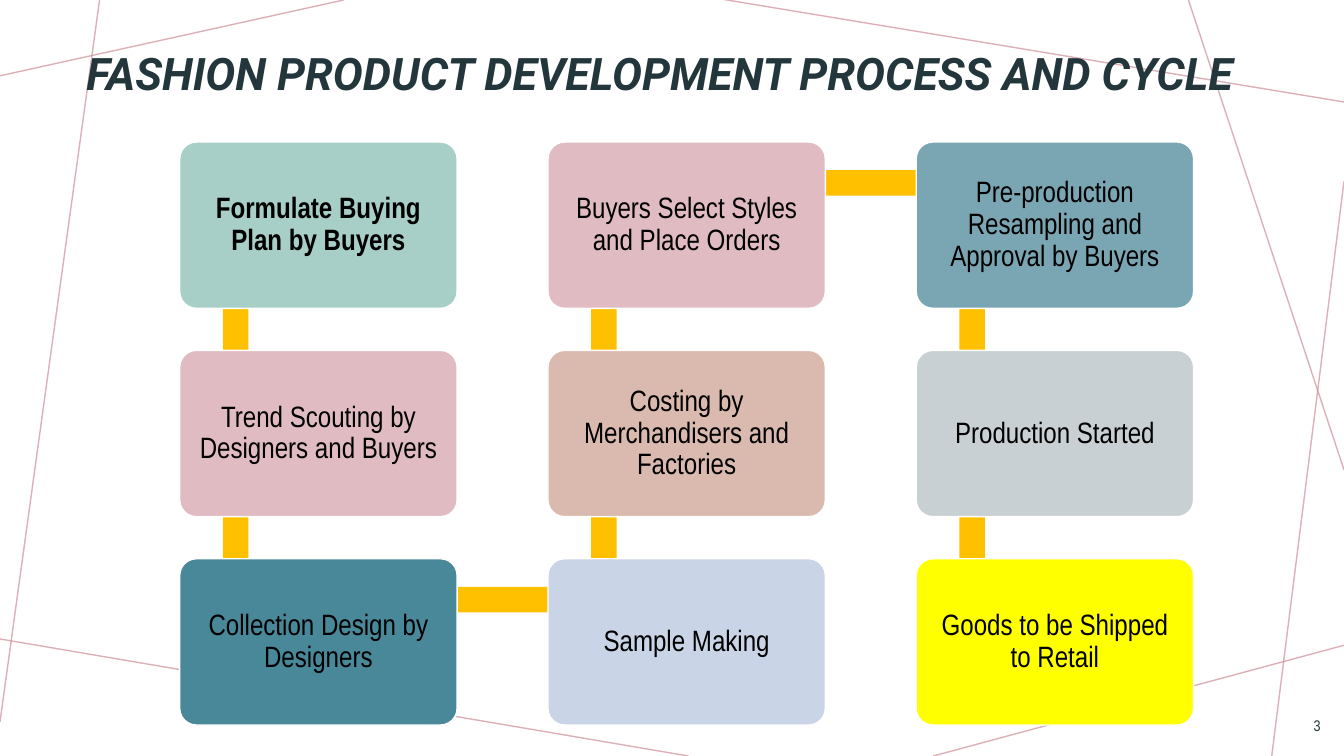
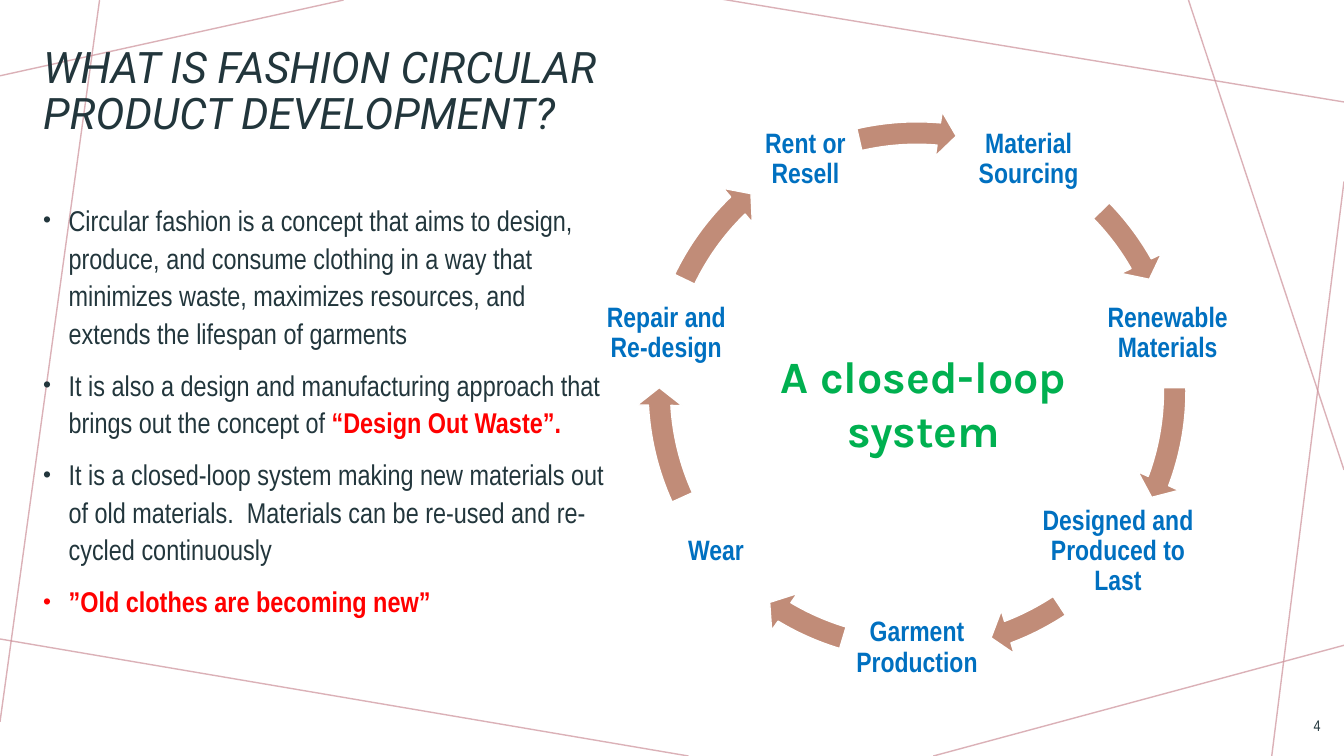
import math

from lxml import etree
from pptx import Presentation
from pptx import util as u
from pptx.dml.color import RGBColor
from pptx.enum import shapes, text
from pptx.oxml import ns

INK = RGBColor(0x22, 0x36, 0x3C)
BLACK = RGBColor(0, 0, 0)
WHITE = RGBColor(0xFF, 0xFF, 0xFF)
ROSE = RGBColor(0xCC, 0x90, 0x99)
GOLD = RGBColor(0xFF, 0xC0, 0x00)
RED = RGBColor(0xFF, 0x00, 0x00)
BLUE = RGBColor(0x00, 0x70, 0xC0)
GREEN = RGBColor(0x00, 0xB0, 0x50)
CLAY = RGBColor(0xC1, 0x8C, 0x78)
MINT = RGBColor(0xA7, 0xCF, 0xC7)
PINK = RGBColor(0xE0, 0xBC, 0xC2)
TEAL = RGBColor(0x48, 0x88, 0x99)
PERIWINKLE = RGBColor(0xC9, 0xD4, 0xE6)
SAND = RGBColor(0xDA, 0xBA, 0xAE)
STEEL = RGBColor(0x7A, 0xA6, 0xB4)
SILVER = RGBColor(0xC8, 0xD0, 0xD4)
YELLOW = RGBColor(0xFF, 0xFF, 0x00)

BODY_FONT = "Arial Narrow"
TITLE_FONT = "Roboto"
CENTER = text.PP_ALIGN.CENTER
MIDDLE = text.MSO_ANCHOR.MIDDLE

BACKGROUND_LINES = [
    (8.66, 0, 0, 1.91),
    (2.51, 0, 0, 18.19),
    (17.35, 19.05, -0.13, 16.08),
    (33.87, 16.26, 23.52, 19.05),
    (33.87, 4.57, 32.05, 19.05),
    (33.87, 11.84, 29.95, 0),
    (33.87, 2.57, 18.14, -0.03),
]

STEPS = [
    ("Formulate Buying Plan by Buyers", MINT, 0, 0),
    ("Trend Scouting by Designers and Buyers", PINK, 0, 1),
    ("Collection Design by Designers", TEAL, 0, 2),
    ("Sample Making", PERIWINKLE, 1, 2),
    ("Costing by Merchandisers and Factories", SAND, 1, 1),
    ("Buyers Select Styles and Place Orders", PINK, 1, 0),
    ("Pre-production Resampling and Approval by Buyers", STEEL, 2, 0),
    ("Production Started", SILVER, 2, 1),
    ("Goods to be Shipped to Retail", YELLOW, 2, 2),
]
STEP_LEFT, STEP_TOP = 4.53, 3.58
STEP_WIDTH, STEP_HEIGHT = 6.99, 4.19
COLUMN_PITCH, ROW_PITCH = 9.28, 5.25
BAR_THICKNESS = 0.64

BULLETS = [
    [("Circular fashion is a concept that aims to design, produce, and consume "
      "clothing in a way that minimizes waste, maximizes resources, and extends "
      "the lifespan of garments", INK, False)],
    [("It is also a design and manufacturing approach that brings out the "
      "concept of ", INK, False),
     ("“Design Out Waste”.", RED, True)],
    [("It is a closed-loop system making new materials out of old materials.  "
      "Materials can be re-used and re-cycled continuously", INK, False)],
    [("”Old clothes are becoming new”", RED, True)],
]

STAGES = [
    ("Material Sourcing", 3.66, 315.67, 330.44),
    ("Renewable Materials", 4.88, 359.3, 20.49),
    ("Designed and Produced to Last", 4.29, 56.49, 69.38),
    ("Garment Production", 3.73, 106.71, 120.94),
    ("Wear", 2.72, 155.59, 176.79),
    ("Repair and Re-design", 3.96, 205.65, 225.98),
    ("Rent or Resell", 2.72, 257.08, 274.85),
]
RING_X, RING_Y, RING_RADIUS = 23.11, 9.85, 6.48
ARROW_SIZE = 14.12
LABEL_HEIGHT = 2.72


def add_run(paragraph, content, size, color, font=BODY_FONT, bold=False, italic=False):
    run = paragraph.add_run()
    run.text = content
    run.font.name = font
    run.font.size = u.Pt(size)
    run.font.color.rgb = color
    run.font.bold = bold
    run.font.italic = italic


def set_frame(shape, anchor=MIDDLE, inset=None):
    frame = shape.text_frame
    frame.word_wrap = True
    frame.vertical_anchor = anchor
    if inset is not None:
        frame.margin_left = frame.margin_right = u.Cm(inset)
        frame.margin_top = frame.margin_bottom = u.Cm(inset)
    return frame


def add_text(slide, box, anchor=MIDDLE, inset=None):
    shape = slide.shapes.add_textbox(*map(u.Cm, box))
    return set_frame(shape, anchor, inset)


def add_block(slide, kind, box, fill, outline=None):
    shape = slide.shapes.add_shape(kind, *map(u.Cm, box))
    shape.shadow.inherit = False
    shape.fill.solid()
    shape.fill.fore_color.rgb = fill
    if outline is None:
        shape.line.fill.background()
    else:
        shape.line.color.rgb = outline
        shape.line.width = u.Pt(1)
    return shape


def fill_label(frame, content, size, color, bold):
    paragraph = frame.paragraphs[0]
    paragraph.alignment = CENTER
    paragraph.line_spacing = 0.9
    add_run(paragraph, content, size, color, bold=bold)


def add_title(slide, content, box, size, bold=False):
    paragraph = add_text(slide, box).paragraphs[0]
    paragraph.line_spacing = 0.9
    add_run(paragraph, content, size, INK, TITLE_FONT, bold, True)


def add_page_number(slide, number):
    paragraph = add_text(slide, (32.23, 17.78, 1.3, 1.02)).paragraphs[0]
    paragraph.alignment = text.PP_ALIGN.RIGHT
    add_run(paragraph, str(number), 11, INK)


def add_background_line(slide, ends):
    connector = slide.shapes.add_connector(
        shapes.MSO_CONNECTOR.STRAIGHT, *map(u.Cm, ends))
    connector.line.color.rgb = ROSE
    connector.line.width = u.Pt(1)
    properties = connector.element.spPr
    color = next(properties.iter(ns.qn("a:srgbClr")))
    etree.SubElement(color, ns.qn("a:alpha"), val="70000")
    etree.SubElement(properties, ns.qn("a:effectLst"))
    return connector


def decorate_master(presentation, slide):
    tree = presentation.slide_master.shapes.element
    for ends in BACKGROUND_LINES:
        tree.append(add_background_line(slide, ends).element)


def step_corner(column, row):
    return STEP_LEFT + column * COLUMN_PITCH, STEP_TOP + row * ROW_PITCH


def add_step_bar(slide, start, end):
    left, top = step_corner(min(start[0], end[0]), min(start[1], end[1]))
    if start[0] == end[0]:
        box = (left + 1.09, top + 1.04, BAR_THICKNESS, ROW_PITCH)
    else:
        box = (left + 1.42, top + 0.71, COLUMN_PITCH, BAR_THICKNESS)
    add_block(slide, shapes.MSO_SHAPE.RECTANGLE, box, GOLD)


def add_step(slide, content, fill, column, row, bold):
    box = (*step_corner(column, row), STEP_WIDTH, STEP_HEIGHT)
    shape = add_block(slide, shapes.MSO_SHAPE.ROUNDED_RECTANGLE, box, fill, WHITE)
    shape.adjustments[0] = 0.1
    fill_label(set_frame(shape, inset=0.23), content, 21, BLACK, bold)


def add_process(slide):
    cells = [step[2:] for step in STEPS]
    for start, end in zip(cells, cells[1:]):
        add_step_bar(slide, start, end)
    for index, step in enumerate(STEPS):
        add_step(slide, *step, bold=index == 0)


def add_bullet(paragraph, runs):
    paragraph.line_spacing = 1.1
    paragraph.space_before = u.Pt(10)
    properties = paragraph._p.get_or_add_pPr()
    indent = u.Cm(0.64)
    properties.set("marL", str(indent))
    properties.set("indent", str(-indent))
    etree.SubElement(properties, ns.qn("a:buSzPct"), val="80000")
    etree.SubElement(properties, ns.qn("a:buFont"), typeface="Arial")
    etree.SubElement(properties, ns.qn("a:buChar"), char="•")
    for content, color, bold in runs:
        add_run(paragraph, content, 20.4, color, bold=bold)


def add_bullets(slide):
    frame = add_text(slide, (0.84, 4.9, 14.63, 13.31), text.MSO_ANCHOR.TOP)
    for index, runs in enumerate(BULLETS):
        paragraph = frame.add_paragraph() if index else frame.paragraphs[0]
        add_bullet(paragraph, runs)


def add_ring_arrow(slide, start, end):
    box = (RING_X - ARROW_SIZE / 2, RING_Y - ARROW_SIZE / 2, ARROW_SIZE, ARROW_SIZE)
    arrow = add_block(slide, shapes.MSO_SHAPE.CIRCULAR_ARROW, box, CLAY, WHITE)
    values = (0.04, 3.92 * 0.6, end * 0.6, start * 0.6, 0.04)
    for index, value in enumerate(values):
        arrow.adjustments[index] = value


def add_ring(slide):
    for index, (content, width, start, end) in enumerate(STAGES):
        angle = math.tau * (index + 0.5) / len(STAGES)
        x = RING_X + RING_RADIUS * math.sin(angle)
        y = RING_Y - RING_RADIUS * math.cos(angle)
        box = (x - width / 2, y - LABEL_HEIGHT / 2, width, LABEL_HEIGHT)
        fill_label(add_text(slide, box, inset=0.08), content, 20, BLUE, True)
        add_ring_arrow(slide, start, end)


def add_ring_caption(slide):
    frame = add_text(slide, (17.68, 8.66, 9.93, 3), text.MSO_ANCHOR.TOP)
    paragraph = frame.paragraphs[0]
    paragraph.alignment = CENTER
    paragraph._p.get_or_add_pPr().set("marL", str(u.Cm(1.27)))
    add_run(paragraph, "A closed-loop system", 32, GREEN, "Karla", True)


def main():
    presentation = Presentation()
    presentation.slide_width = u.Cm(33.87)
    presentation.slide_height = u.Cm(19.05)
    blank = presentation.slide_layouts[6]

    process = presentation.slides.add_slide(blank)
    decorate_master(presentation, process)
    add_title(process, "FASHION PRODUCT DEVELOPMENT PROCESS AND CYCLE",
              (1.93, 0, 30.68, 3.84), 32, True)
    add_process(process)
    add_page_number(process, 3)

    circular = presentation.slides.add_slide(blank)
    add_title(circular, "WHAT IS FASHION CIRCULAR PRODUCT DEVELOPMENT?",
              (0.84, 0.41, 17.32, 3.84), 31)
    add_bullets(circular)
    add_ring(circular)
    add_ring_caption(circular)
    add_page_number(circular, 4)

    presentation.save("out.pptx")


if __name__ == "__main__":
    main()
